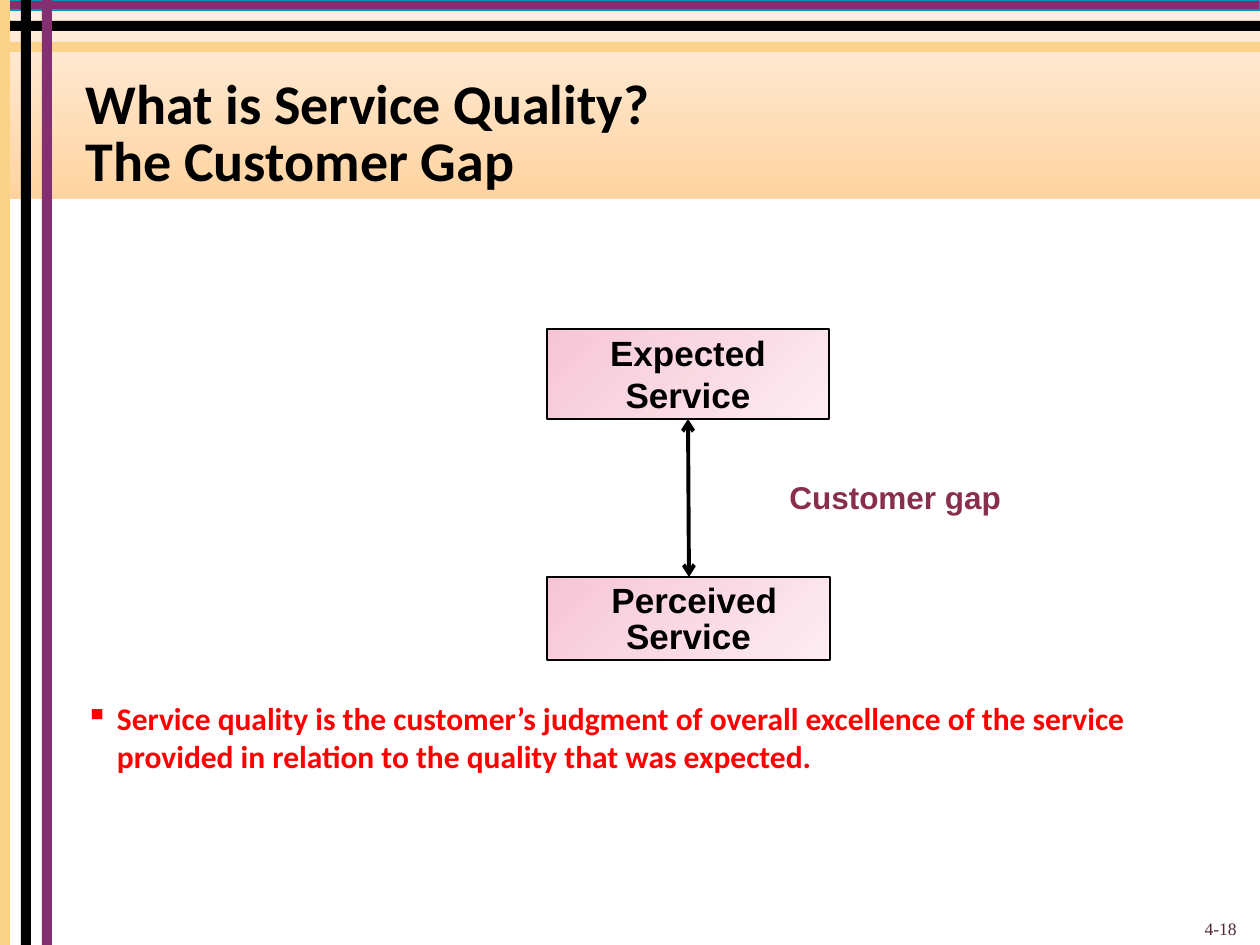
from lxml import etree
from pptx import Presentation
from pptx.dml.color import RGBColor
from pptx.enum.shapes import MSO_CONNECTOR, MSO_SHAPE
from pptx.enum.text import MSO_ANCHOR, PP_ALIGN
from pptx.oxml.ns import qn
from pptx.util import Pt

RECT = MSO_SHAPE.RECTANGLE
TOP, MIDDLE, BOTTOM = MSO_ANCHOR.TOP, MSO_ANCHOR.MIDDLE, MSO_ANCHOR.BOTTOM
LEFT, CENTER, RIGHT = PP_ALIGN.LEFT, PP_ALIGN.CENTER, PP_ALIGN.RIGHT

C = {"purple": "852F73", "teal": "0391BD", "gold": "FBD388", "black": "000000",
     "peach": "FFD3A0", "cream": "FFF0E3", "pink": "F7C6D6", "blush": "FCECF1",
     "red": "FF0000", "wine": "8A2E4E", "plum": "51253A"}
W, H, BAR = 1260, 945, 10

BARS = [
    ((0, 0, W, BAR), "purple"),
    ((0, 42, W, BAR), "gold"),
    ((0, 21, W, BAR), "black"),
    ((42, 0, BAR, H), "purple"),
    ((0, 0, BAR, H), "gold"),
    ((21, 0, BAR, H), "black"),
]
TITLE = "What is Service Quality?\vThe Customer Gap"
BOXES = [
    ((547, 329, 282, 90), [("Expected Service", 20)], 1),
    ((547, 577, 283, 83), [(" ", 24), ("Perceived Service", 20)], 0.83),
]
GAP_ARROW = (688, 419, 689, 577)
DEFINITION = ("Service quality is the customer’s judgment of overall excellence of the "
              "service provided in relation to the quality that was expected.")
LABELS = [
    ((777, 472, 252, 50), "Customer gap", 18, "Arial", "wine", True, LEFT, TOP),
    ((955, 882, 294, 63), "4-18", 10, "Times New Roman", "plum", False, RIGHT, BOTTOM),
]


def px(n):
    return round(n * 914400 / 126)


def rgb(name):
    return RGBColor.from_string(C[name])


def assign(obj, **values):
    for name, value in values.items():
        setattr(obj, name, value)


def place(shape, box):
    assign(shape, **dict(zip(("left", "top", "width", "height"), map(px, box))))


def add_rect(s, box, colors, angle=0):
    sp = s.shapes.add_shape(RECT, *map(px, box))
    sp.shadow.inherit = False
    sp.line.fill.background()
    if len(colors) == 1:
        sp.fill.solid()
        sp.fill.fore_color.rgb = rgb(colors[0])
    else:
        sp.fill.gradient()
        sp.fill.gradient_angle = angle
        for stop, color in zip(sp.fill.gradient_stops, colors):
            stop.color.rgb = rgb(color)
    return sp


def outline(line, color, width):
    line.color.rgb = rgb(color)
    line.width = Pt(width)


def write(sp, runs, font, color, bold=True, align=LEFT, anchor=TOP, spacing=1):
    tf = sp.text_frame
    assign(tf, word_wrap=True, vertical_anchor=anchor)
    p = tf.paragraphs[0]
    assign(p, alignment=align, line_spacing=spacing)
    for text, size in runs:
        if "\v" in text:
            p.text = text
            group = p.runs
        else:
            r = p.add_run()
            r.text = text
            group = [r]
        for r in group:
            assign(r.font, name=font, size=Pt(size), bold=bold)
            r.font.color.rgb = rgb(color)
    return p


def add_bullet(p, char, indent):
    pPr = p._p.get_or_add_pPr()
    pPr.set("marL", str(px(indent)))
    pPr.set("indent", str(-px(indent)))
    etree.SubElement(pPr, qn("a:buChar"), char=char)


def add_arrow(s, ends):
    cx = s.shapes.add_connector(MSO_CONNECTOR.STRAIGHT, *map(px, ends))
    outline(cx.line, "black", 2.25)
    ln = cx.line._get_or_add_ln()
    for tag in ("a:headEnd", "a:tailEnd"):
        etree.SubElement(ln, qn(tag), type="arrow")
    etree.SubElement(cx._element.spPr, qn("a:effectLst"))


def main():
    prs = Presentation()
    assign(prs, slide_width=px(W), slide_height=px(H))
    s = prs.slides.add_slide(prs.slide_layouts[5])

    add_rect(s, (0, 0, W, 199), ("peach", "cream"), 90)
    bars = [add_rect(s, box, (color,)) for box, color in BARS]
    outline(bars[0].line, "teal", 0)

    title = s.shapes.title
    title.element.getparent().append(title.element)
    place(title, (73, 73, 1166, 126))
    write(title, [(TITLE, 32)], "Calibri", "black", anchor=MIDDLE, spacing=0.85)

    body = s.shapes.add_textbox(*map(px, (73, 693, 1166, 189)))
    p = write(body, [(DEFINITION, 18)], "Calibri", "red")
    p.space_before = Pt(3.6)
    add_bullet(p, "▪", 31.5)

    for box, runs, spacing in BOXES:
        sp = add_rect(s, box, ("pink", "blush"), 315)
        outline(sp.line, "black", 1)
        assign(sp.text_frame, margin_left=px(6), margin_right=px(6),
               margin_top=px(3), margin_bottom=px(3))
        write(sp, runs, "Arial", "black", align=CENTER, spacing=spacing)

    add_arrow(s, GAP_ARROW)
    for box, text, size, *style in LABELS:
        write(s.shapes.add_textbox(*map(px, box)), [(text, size)], *style)

    prs.save("out.pptx")


if __name__ == "__main__":
    main()
